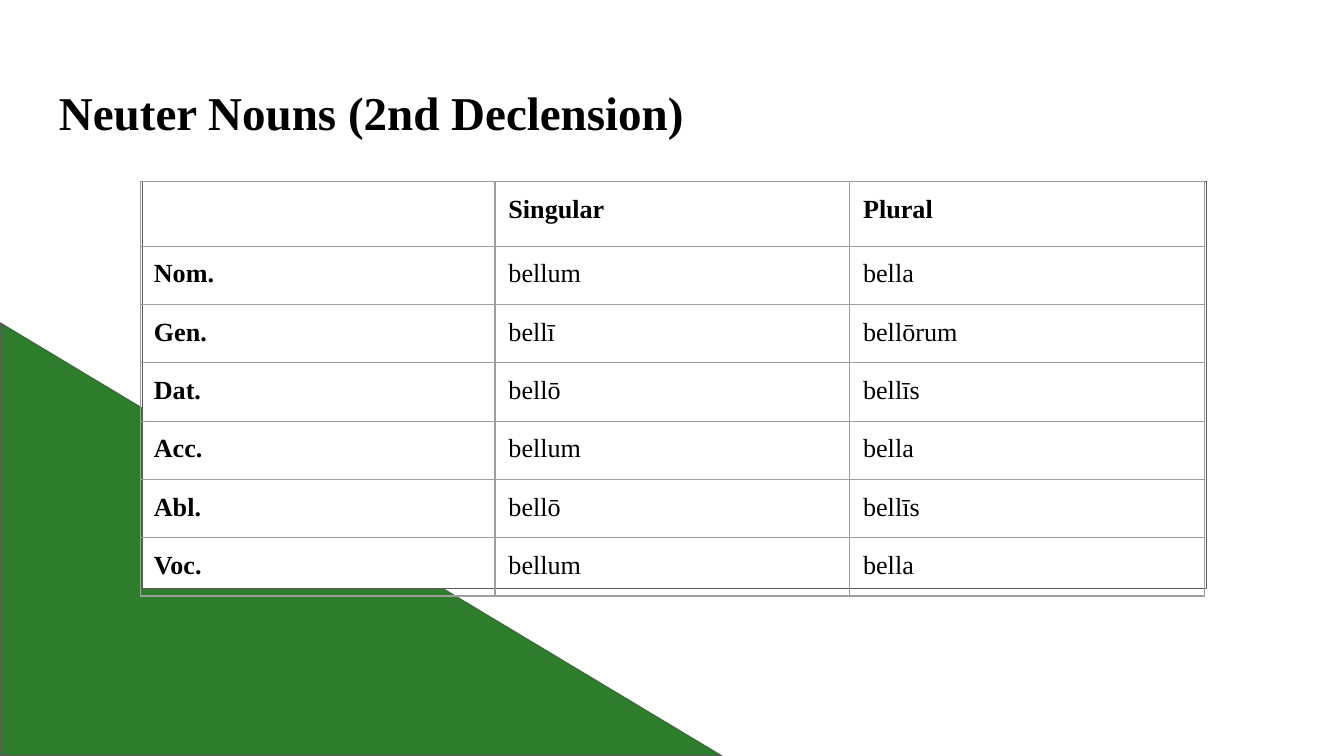
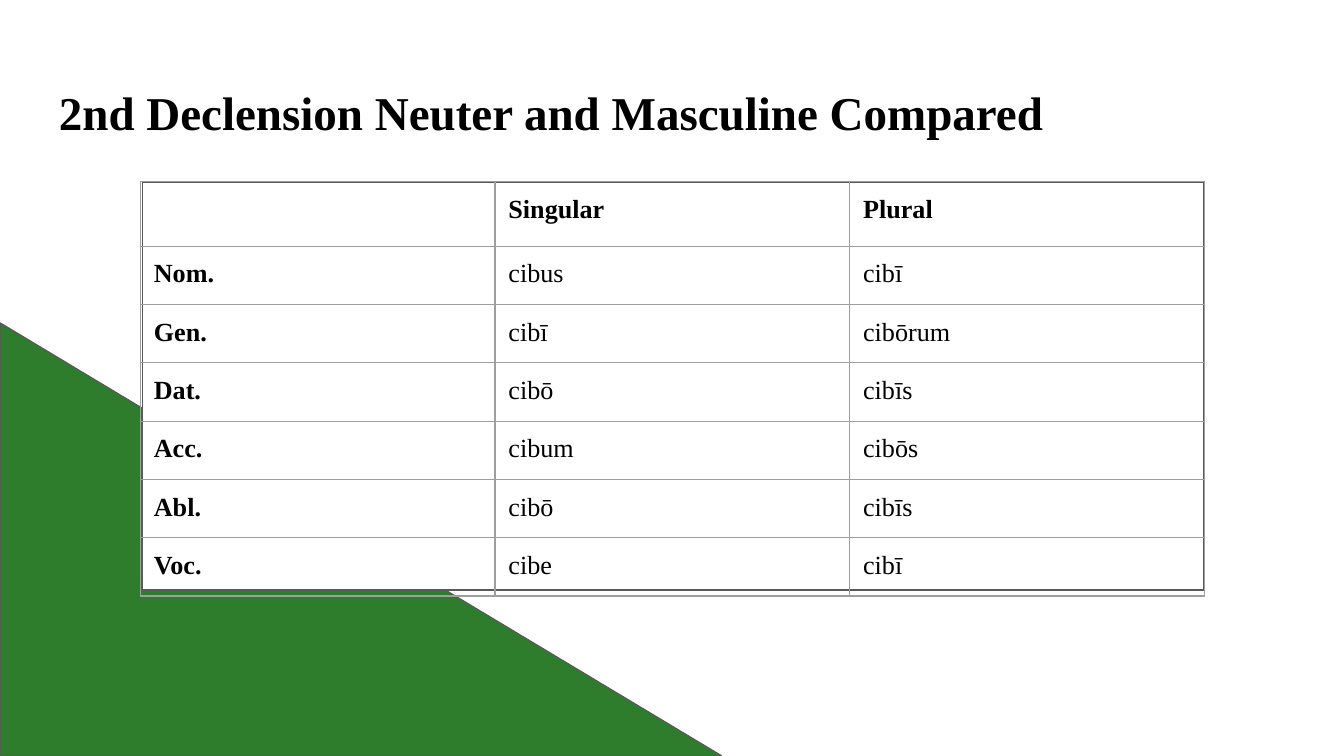
from dataclasses import dataclass

from lxml.etree import SubElement
from pptx import Presentation
from pptx.dml.color import RGBColor
from pptx.enum.shapes import MSO_SHAPE as Shape
from pptx.enum.text import MSO_ANCHOR as Anchor, PP_ALIGN as Align
from pptx.oxml.ns import qn
from pptx.util import Pt

# Content
NUMBERS = ("Singular", "Plural")
CASES = ("Nom.", "Gen.", "Dat.", "Acc.", "Abl.", "Voc.")

DECLENSIONS = [
    {
        "title": "Neuter Nouns (2nd Declension)",
        "title_size": (671, 45.4),
        "panel": (76.3, 97.2, 570.2, 218.2),
        "forms": [
            ("bellum", "bella"),
            ("bellī", "bellōrum"),
            ("bellō", "bellīs"),
            ("bellum", "bella"),
            ("bellō", "bellīs"),
            ("bellum", "bella"),
        ],
    },
    {
        "title": "2nd Declension Neuter and Masculine Compared",
        "title_size": (695.5, 42.5),
        "panel": (76.3, 97.9, 568.8, 218.2),
        "forms": [
            ("cibus", "cibī"),
            ("cibī", "cibōrum"),
            ("cibō", "cibīs"),
            ("cibum", "cibōs"),
            ("cibō", "cibīs"),
            ("cibe", "cibī"),
        ],
    },
]


@dataclass(frozen=True)
class Theme:
    font: str = "Times New Roman"
    title_pt: float = 25.2
    cell_pt: float = 14
    ink: str = "000000"
    paper: str = "FFFFFF"
    green: str = "2D7D2D"
    outline: str = "595959"
    grid: str = "9E9E9E"
    line_pt: float = 0.75


THEME = Theme()

# Layout, in points
SLIDE_W, SLIDE_H = 720, 405
CORNER_W, CORNER_H = 386.6, 232
TITLE_LEFT, TITLE_TOP = 24.5, 35.3
TITLE_INSET_TOP = 9.6
TABLE_LEFT, TABLE_TOP = 75.2, 97.4
COLUMN_W, HEADER_H, ROW_H = 190, 34.5, 30
INSET = 7.2


def color(code):
    return RGBColor.from_string(code)


def add_block(slide, kind, box, fill):
    block = slide.shapes.add_shape(kind, *map(Pt, box))
    block.shadow.inherit = False
    block.fill.solid()
    block.fill.fore_color.rgb = color(fill)
    block.line.color.rgb = color(THEME.outline)
    block.line.width = Pt(THEME.line_pt)


def set_insets(holder, top=INSET):
    """Works for a cell and for a text frame alike."""
    holder.margin_left = holder.margin_right = holder.margin_bottom = Pt(INSET)
    holder.margin_top = Pt(top)


def write(frame, words, size, bold):
    frame.text = words
    paragraph = frame.paragraphs[0]
    paragraph.alignment = Align.LEFT
    for run in paragraph.runs:
        run.font.name = THEME.font
        run.font.size = Pt(size)
        run.font.bold = bold
        run.font.color.rgb = color(THEME.ink)


def add_title(slide, words, size):
    title = slide.shapes.add_textbox(*map(Pt, (TITLE_LEFT, TITLE_TOP, *size)))
    frame = title.text_frame
    frame.word_wrap = True
    frame.vertical_anchor = Anchor.TOP
    set_insets(frame, TITLE_INSET_TOP)
    write(frame, words, THEME.title_pt, True)


def style_cell(cell):
    """Grid lines on all four sides and no fill."""
    cell.fill.background()
    properties = cell._tc.get_or_add_tcPr()
    for place, side in enumerate(("a:lnL", "a:lnR", "a:lnT", "a:lnB")):
        border = SubElement(properties, qn(side), w=str(Pt(THEME.line_pt)))
        fill = SubElement(border, qn("a:solidFill"))
        SubElement(fill, qn("a:srgbClr"), val=THEME.grid)
        properties.insert(place, border)


def add_paradigm(slide, forms):
    rows = [("", *NUMBERS)] + [(case, *pair) for case, pair in zip(CASES, forms)]
    heights = [HEADER_H] + [ROW_H] * len(forms)
    columns = len(rows[0])
    box = (TABLE_LEFT, TABLE_TOP, COLUMN_W * columns, sum(heights))
    table = slide.shapes.add_table(len(rows), columns, *map(Pt, box)).table
    table.first_row = table.horz_banding = False
    for column in table.columns:
        column.width = Pt(COLUMN_W)
    for r, row in enumerate(rows):
        table.rows[r].height = Pt(heights[r])
        for c, words in enumerate(row):
            cell = table.cell(r, c)
            style_cell(cell)
            if words:
                set_insets(cell)
                write(cell.text_frame, words, THEME.cell_pt, r == 0 or c == 0)


def add_declension(deck, declension):
    slide = deck.slides.add_slide(deck.slide_layouts[6])
    slide.background.fill.solid()
    slide.background.fill.fore_color.rgb = color(THEME.paper)
    corner = (0, SLIDE_H - CORNER_H, CORNER_W, CORNER_H)
    add_block(slide, Shape.RIGHT_TRIANGLE, corner, THEME.green)
    add_title(slide, declension["title"], declension["title_size"])
    add_block(slide, Shape.RECTANGLE, declension["panel"], THEME.paper)
    add_paradigm(slide, declension["forms"])


def main():
    deck = Presentation()
    deck.slide_width, deck.slide_height = Pt(SLIDE_W), Pt(SLIDE_H)
    for declension in DECLENSIONS:
        add_declension(deck, declension)
    deck.save("out.pptx")


if __name__ == "__main__":
    main()
